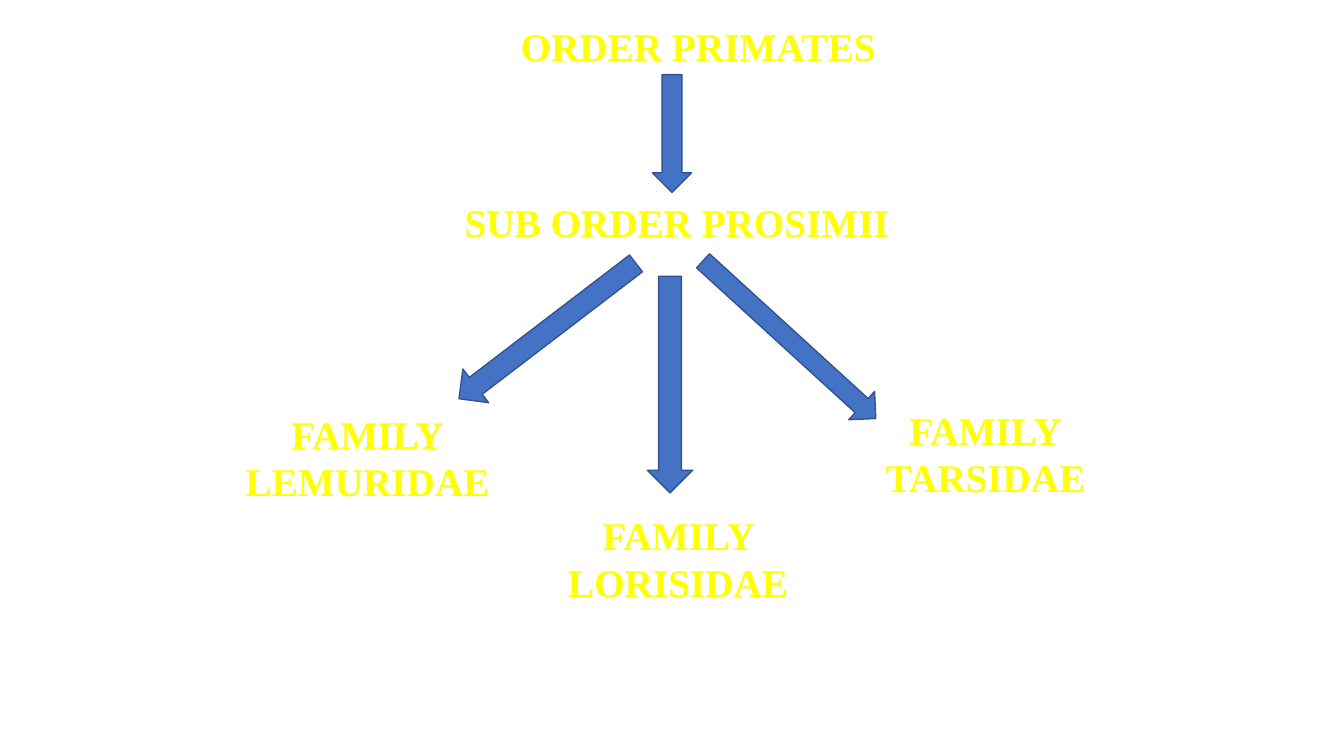
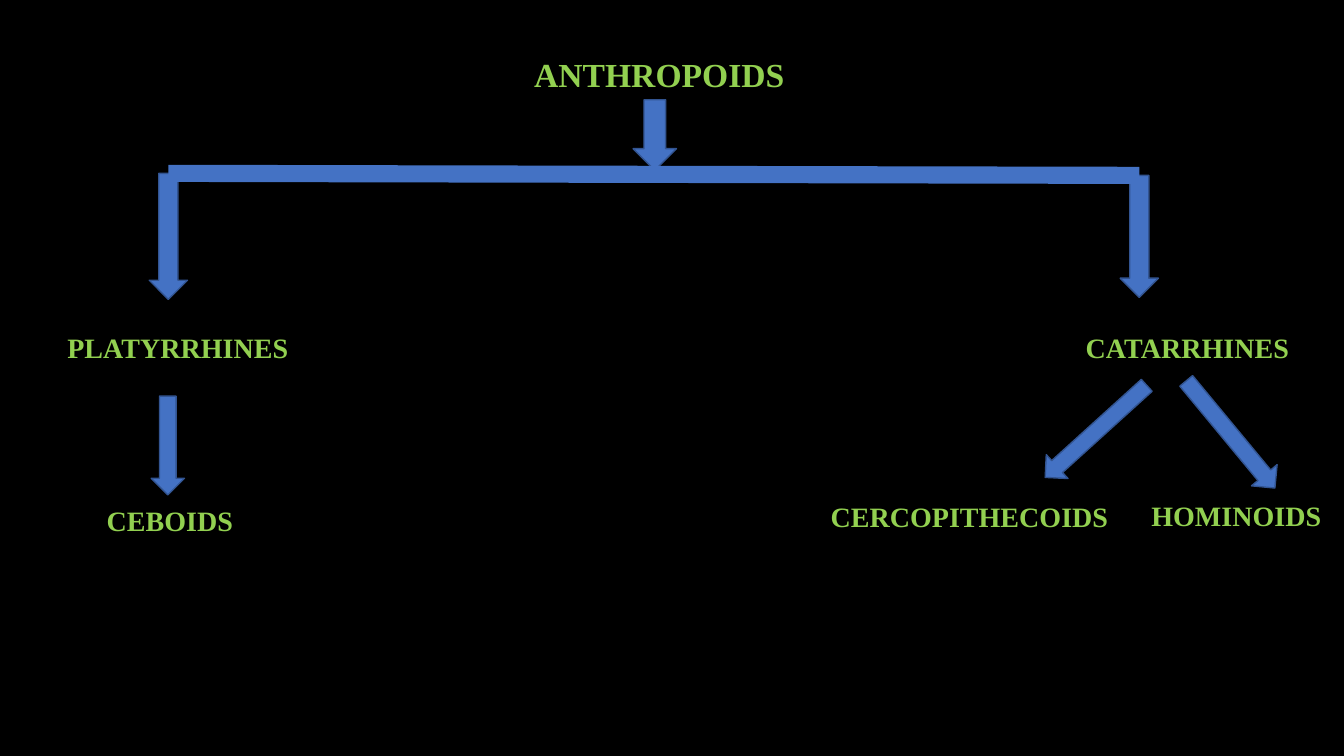
from dataclasses import dataclass

import pptx
import pptx.dml.color
import pptx.enum.shapes
import pptx.enum.text
import pptx.oxml.xmlchemy
import pptx.util
from pptx.util import Inches


@dataclass(frozen=True)
class Theme:
    font: str = "Times New Roman"
    arrow_fill: str = "4472C4"
    arrow_line: str = "325491"
    arrow_line_width: float = 1
    branch_width: float = 12.25
    prosimian_text: str = "FFFF00"
    anthropoid_text: str = "92D050"
    white: str = "FFFFFF"
    black: str = "000000"
    large: int = 28
    medium: int = 24
    small: int = 20


THEME = Theme()
LEFT = pptx.enum.text.PP_ALIGN.LEFT
CENTER = pptx.enum.text.PP_ALIGN.CENTER

# labels: paragraphs, (left, top, width, height), size, alignment
# arrows: (left, top, width, height), rotation
# branches: (start x, start y), (end x, end y)
SLIDES = [
    {
        "background": THEME.white,
        "text_color": THEME.prosimian_text,
        "labels": [
            (["ORDER PRIMATES"], (4.51, 0.17, 4.83, 0.57), THEME.large, CENTER),
            (["SUB ORDER PROSIMII"], (4.51, 1.92, 5.37, 0.57), THEME.large, LEFT),
            (["FAMILY", "LEMURIDAE"], (2.17, 4.02, 2.95, 1.04), THEME.large, CENTER),
            (["FAMILY LORISIDAE"], (5.45, 5.02, 2.55, 1.04), THEME.large, CENTER),
            (["FAMILY", "TARSIDAE"], (8.54, 3.98, 2.47, 1.04), THEME.large, CENTER),
        ],
        "arrows": [
            ((6.47, 0.74, 0.39, 1.17), 0),
            ((7.64, 2.21, 0.38, 2.32), 312.4),
            ((6.42, 2.74, 0.45, 2.15), 0),
            ((5.22, 2.18, 0.42, 2.21), 52.6),
        ],
        "branches": [],
    },
    {
        "background": THEME.black,
        "text_color": THEME.anthropoid_text,
        "labels": [
            (["ANTHROPOIDS"], (5.2, 0.49, 2.94, 0.5), THEME.medium, LEFT),
            (["PLATYRRHINES"], (0.57, 3.23, 2.58, 0.44), THEME.small, LEFT),
            (["CEBOIDS"], (0.96, 4.95, 1.52, 0.44), THEME.small, LEFT),
            (["CATARRHINES"], (10.67, 3.23, 2.58, 0.44), THEME.small, LEFT),
            (["CERCOPITHECOIDS"], (8.14, 4.91, 3.05, 0.44), THEME.small, LEFT),
            (["HOMINOIDS"], (11.32, 4.9, 2.02, 0.44), THEME.small, LEFT),
        ],
        "arrows": [
            ((6.28, 0.99, 0.43, 0.7), 0),
            ((1.48, 1.72, 0.38, 1.25), 0),
            ((11.11, 1.74, 0.38, 1.21), 0),
            ((1.5, 3.93, 0.33, 0.98), 0),
            ((10.71, 3.6, 0.32, 1.36), 47.8),
            ((12.04, 3.62, 0.33, 1.38), 320.4),
        ],
        "branches": [((1.67, 1.72), (11.3, 1.74))],
    },
]


def rgb(value):
    return pptx.dml.color.RGBColor.from_string(value)


def inches(values):
    return [Inches(value) for value in values]


def add_label(slide, paragraphs, box, size, alignment, color):
    frame = slide.shapes.add_textbox(*inches(box)).text_frame
    frame.word_wrap = True
    for index, text in enumerate(paragraphs):
        paragraph = frame.add_paragraph() if index else frame.paragraphs[0]
        paragraph.alignment = alignment
        run = paragraph.add_run()
        run.text = text
        run.font.name = THEME.font
        run.font.size = pptx.util.Pt(size)
        run.font.bold = True
        run.font.color.rgb = rgb(color)


def add_arrow(slide, box, rotation):
    arrow = slide.shapes.add_shape(
        pptx.enum.shapes.MSO_SHAPE.DOWN_ARROW, *inches(box)
    )
    arrow.rotation = rotation
    arrow.shadow.inherit = False
    arrow.fill.solid()
    arrow.fill.fore_color.rgb = rgb(THEME.arrow_fill)
    arrow.line.color.rgb = rgb(THEME.arrow_line)
    arrow.line.width = pptx.util.Pt(THEME.arrow_line_width)


def add_branch(slide, start, end):
    branch = slide.shapes.add_connector(
        pptx.enum.shapes.MSO_CONNECTOR.STRAIGHT, *inches(start + end)
    )
    branch.line.color.rgb = rgb(THEME.arrow_fill)
    branch.line.width = pptx.util.Pt(THEME.branch_width)
    properties = branch._element.spPr
    properties.append(pptx.oxml.xmlchemy.OxmlElement("a:effectLst"))


def build_slide(presentation, content):
    slide = presentation.slides.add_slide(presentation.slide_layouts[6])
    slide.background.fill.solid()
    slide.background.fill.fore_color.rgb = rgb(content["background"])
    for label in content["labels"]:
        add_label(slide, *label, content["text_color"])
    for arrow in content["arrows"]:
        add_arrow(slide, *arrow)
    for branch in content["branches"]:
        add_branch(slide, *branch)


def main():
    presentation = pptx.Presentation()
    presentation.slide_width = Inches(13.33)
    presentation.slide_height = Inches(7.5)
    for content in SLIDES:
        build_slide(presentation, content)
    presentation.save("out.pptx")


if __name__ == "__main__":
    main()
